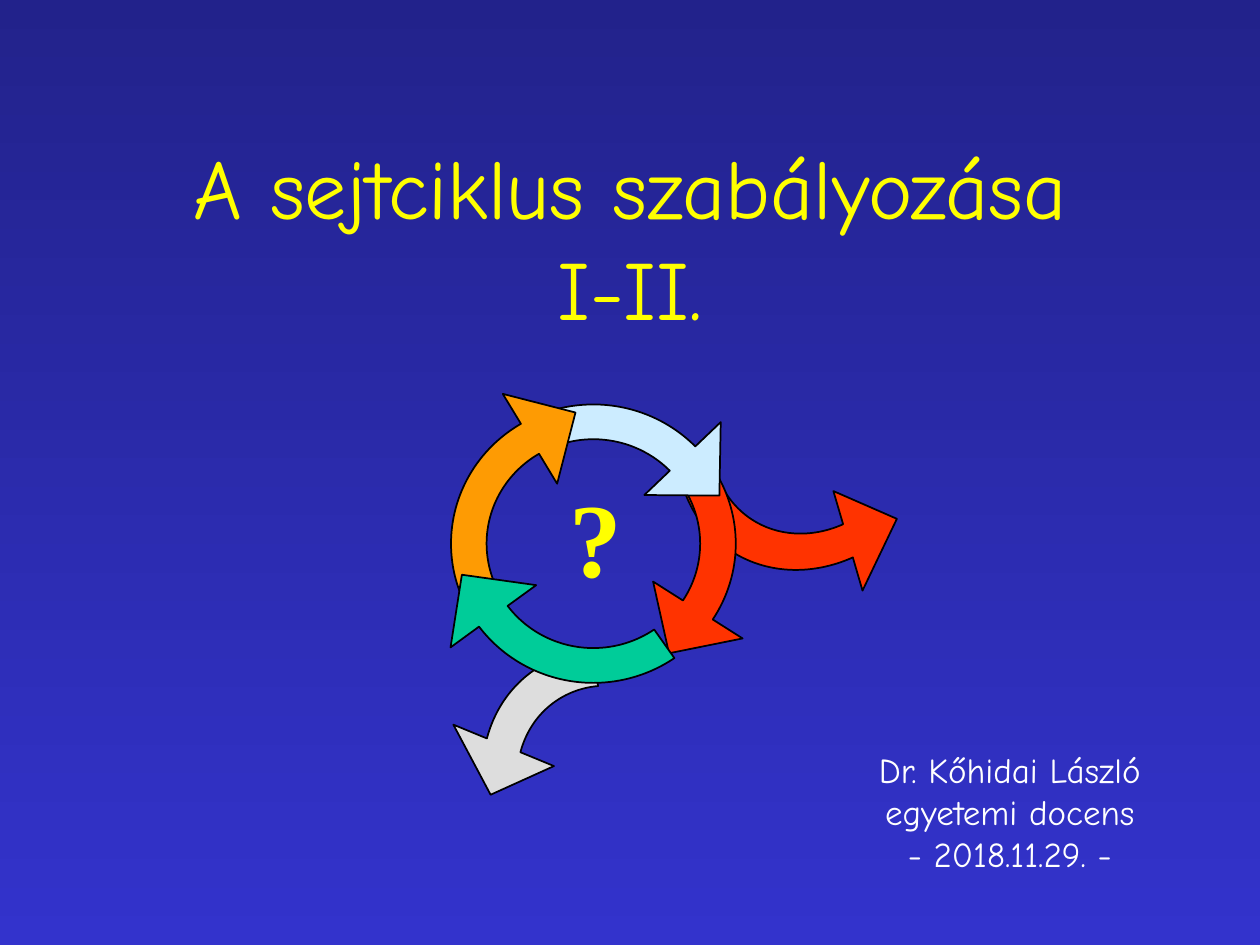
from math import cos, radians, sin, tan

from lxml import etree
from pptx import Presentation, util as u
from pptx.dml.color import RGBColor
from pptx.enum import text
from pptx.oxml import ns

WIDTH, HEIGHT = 10, 7.5
COLORS = {
    "night": "22228B", "blue": "3333CC", "yellow": "FFFF00", "white": "FFFFFF",
    "black": "000000", "grey": "DDDDDD", "red": "FF3300", "ice": "CCECFF",
    "orange": "FE9B03", "green": "00CC99",
}
HAND, SERIF = "Comic Neue", "Times New Roman"

RING = {"box": (3.58, 3.21, 2.26, 2.21), "tilt": 0}
LEAVING = {"box": (3.73, 5.26, 2.4, 2.08), "tilt": 52.7}
ENTERING = {"box": (5.26, 2.33, 2.4, 2.08), "tilt": 303.7}
ARROWS = [
    (LEAVING, 208.6, 146, "grey"),
    (ENTERING, 211.5, 126, "red"),
    (RING, -31, 33, "red"),
    (RING, 252.3, 315.7, "ice"),
    (RING, 160, 239.4, "orange"),
    (RING, 55.3, 143.4, "green"),
]
INNER, BARB_IN, BARB_OUT, TIP, TIP_SWEEP = 0.75, 0.5, 1.25, 0.95, 23


def color(name):
    return RGBColor.from_string(COLORS[name])


def paint_background(slide):
    fill = slide.background.fill
    fill.gradient()
    fill.gradient_angle = 270
    for stop, name in zip(fill.gradient_stops, ("night", "blue")):
        stop.color.rgb = color(name)


def add_run(paragraph, words, size, font, name, bold=False):
    run = paragraph.add_run()
    run.text = words
    run.font.size = u.Pt(size)
    run.font.name = font
    run.font.bold = bold
    run.font.color.rgb = color(name)


def fill_title(slide, lines):
    title = slide.shapes.title
    title.left, title.top = u.Inches(0.075 * WIDTH), u.Inches(HEIGHT / 6)
    title.width, title.height = u.Inches(0.85 * WIDTH), u.Inches(HEIGHT / 6)
    frame = title.text_frame
    frame.auto_size = text.MSO_AUTO_SIZE.NONE
    frame.vertical_anchor = text.MSO_ANCHOR.MIDDLE
    heading = frame.paragraphs[0]
    heading.alignment = text.PP_ALIGN.CENTER
    for index, line in enumerate(lines):
        if index:
            heading.add_line_break()
        add_run(heading, line, 48, HAND, "yellow")


def add_label(slide, box, lines, align, **style):
    label = slide.shapes.add_textbox(*(u.Inches(length) for length in box))
    frame = label.text_frame
    frame.word_wrap = False
    frame.auto_size = text.MSO_AUTO_SIZE.SHAPE_TO_FIT_TEXT
    for index, line in enumerate(lines):
        paragraph = frame.add_paragraph() if index else frame.paragraphs[0]
        paragraph.alignment = align
        add_run(paragraph, line, **style)


def orbit_point(angle, share, bend=0):
    turn = radians(angle)
    return (share * (cos(turn) - bend * sin(turn)),
            share * (sin(turn) + bend * cos(turn)))


def arc(start, end, share):
    middle = 90 * round((start + end) / 180)
    curves = []
    for first, last in ((start, middle), (middle, end)):
        bend = 4 / 3 * tan(radians(last - first) / 4)
        curves.append(("cubicBezTo", [orbit_point(first, share, bend),
                                      orbit_point(last, share, -bend),
                                      orbit_point(last, share)]))
    return curves


def arrow_outline(tail, neck):
    tip = neck + (TIP_SWEEP if neck > tail else -TIP_SWEEP)
    return [
        ("moveTo", [orbit_point(neck, INNER)]),
        *arc(neck, tail, INNER),
        ("lnTo", [orbit_point(tail, 1)]),
        *arc(tail, neck, 1),
        ("lnTo", [orbit_point(neck, BARB_OUT)]),
        ("lnTo", [orbit_point(tip, TIP)]),
        ("lnTo", [orbit_point(neck, BARB_IN)]),
        ("close", []),
    ]


def add_curved_arrow(shapes, orbit, tail, neck, name):
    left, top, width, height = (u.Inches(length) for length in orbit["box"])
    right, bottom = left + width, top + height
    builder = shapes.build_freeform(left, top)
    builder.add_line_segments([(right, top), (right, bottom), (left, bottom)])
    arrow = builder.convert_to_shape()
    track = next(arrow.element.iter(ns.qn("a:path")))
    for corner in list(track):
        track.remove(corner)
    for command, points in arrow_outline(tail, neck):
        step = etree.SubElement(track, ns.qn(f"a:{command}"))
        for x, y in points:
            etree.SubElement(step, ns.qn("a:pt"),
                             x=str(round(width * (1 + x) / 2)),
                             y=str(round(height * (1 + y) / 2)))
    arrow.rotation = orbit["tilt"]
    arrow.shadow.inherit = False
    arrow.fill.solid()
    arrow.fill.fore_color.rgb = color(name)
    arrow.line.color.rgb = color("black")
    arrow.line.width = u.Pt(1)


def main():
    deck = Presentation()
    deck.slide_width, deck.slide_height = u.Inches(WIDTH), u.Inches(HEIGHT)
    slide = deck.slides.add_slide(deck.slide_layouts[0])
    subtitle = slide.placeholders[1].element
    subtitle.getparent().remove(subtitle)

    paint_background(slide)
    fill_title(slide, ["A sejtciklus szabályozása", "I-II."])
    cycle = slide.shapes.add_group_shape()
    for arrow in ARROWS:
        add_curved_arrow(cycle.shapes, *arrow)
    add_label(slide, (4.42, 3.7, 0.62, 1.1), ["?"], text.PP_ALIGN.LEFT,
              size=60, font=SERIF, name="yellow", bold=True)
    add_label(slide, (6.76, 5.89, 2.51, 1.1),
              ["Dr. Kőhidai László", "egyetemi docens", "- 2018.11.29. -"],
              text.PP_ALIGN.CENTER, size=20, font=HAND, name="white")
    deck.save("out.pptx")


if __name__ == "__main__":
    main()
